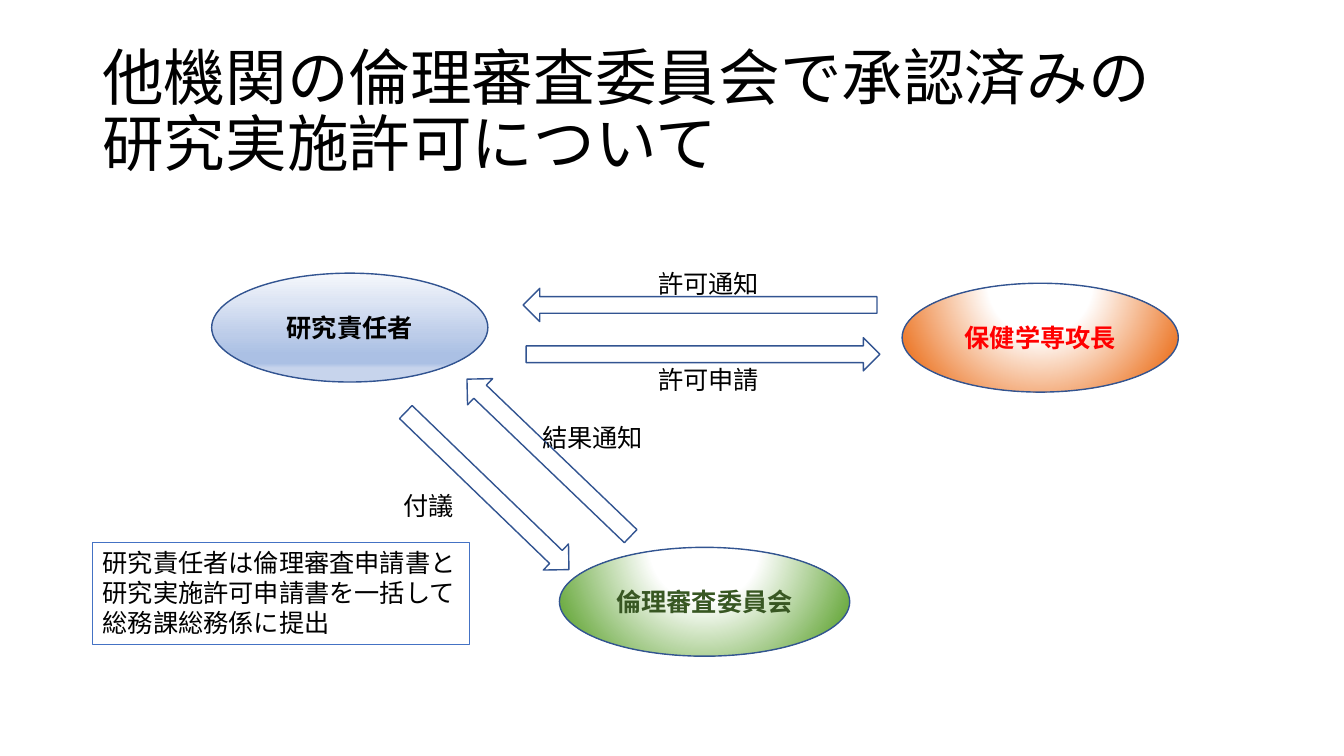
from dataclasses import dataclass
from typing import Optional

from lxml.etree import SubElement
from pptx import Presentation
from pptx.dml.color import RGBColor
from pptx.enum.shapes import MSO_SHAPE
from pptx.enum.text import MSO_ANCHOR, MSO_AUTO_SIZE, PP_ALIGN
from pptx.oxml.ns import qn
from pptx.util import Inches, Pt

COLUMNS, ROWS = 160, 90


@dataclass(frozen=True)
class Theme:
    font: str = "Noto Sans CJK JP"
    title_size: float = 44
    body_size: float = 18
    ink: str = "000000"
    outline: str = "325491"
    note_line: str = "4472C4"
    chief_text: str = "FF0000"
    board_text: str = "385723"
    blue_stops: tuple = ((0, "F6F8FC"), (25, "DDE5F4"), (57, "BCCCE9"), (74, "ABC0E4"),
                         (83, "ABC0E4"), (87, "C7D4EC"), (100, "C7D5ED"))
    orange_stops: tuple = ((0, "FFFFFF"), (35, "FFFFFF"), (100, "ED7D31"))
    green_stops: tuple = ((0, "FFFFFF"), (35, "FFFFFF"), (100, "70AD47"))


@dataclass(frozen=True)
class Area:
    column: float
    row: float
    columns: float
    rows: float


@dataclass(frozen=True)
class Party:
    name: str
    area: Area
    color: str
    stops: tuple
    radial: bool


@dataclass(frozen=True)
class Flow:
    area: Area
    rotation: float
    label: str
    label_area: Area


THEME = Theme()
TITLE_LINES = ("他機関の倫理審査委員会で承認済みの", "研究実施許可について")
TITLE_AREA = Area(11, 4.8, 138, 17.4)
NOTE_LINES = ("研究責任者は倫理審査申請書と", "研究実施許可申請書を一括して", "総務課総務係に提出")
NOTE_AREA = Area(11.04, 64.56, 44.88, 12.12)
PARTIES = (
    Party("研究責任者", Area(25.2, 32.52, 32.88, 12.96), THEME.ink, THEME.blue_stops, False),
    Party("保健学専攻長", Area(107.4, 33.72, 32.88, 12.96), THEME.chief_text,
          THEME.orange_stops, True),
    Party("倫理審査委員会", Area(66.6, 65.16, 34.56, 12.96), THEME.board_text,
          THEME.green_stops, True),
)
FLOWS = (
    Flow(Area(44.52, 56.28, 27, 4.32), 44, "付議", Area(46.8, 57.84, 8.52, 4.8)),
    Flow(Area(51.84, 52.32, 27, 4.32), 223.8, "結果通知", Area(63.36, 49.68, 14.52, 4.8)),
    Flow(Area(62.64, 40.2, 42.12, 3.96), 0, "許可申請", Area(77.16, 42.84, 14.52, 4.8)),
    Flow(Area(62.28, 34.32, 42.12, 3.96), 180, "許可通知", Area(77.16, 31.32, 14.52, 4.8)),
)

deck = Presentation()
deck.slide_width, deck.slide_height = Inches(13.33), Inches(7.5)
page = deck.slides.add_slide(deck.slide_layouts[6])


def place(area: Area) -> tuple:
    across, down = deck.slide_width / COLUMNS, deck.slide_height / ROWS
    return (round(area.column * across), round(area.row * down),
            round(area.columns * across), round(area.rows * down))


def add_span(para, text: str, size: float, color: str, bold: bool = False) -> None:
    span = para.add_run()
    span.text = text
    span.font.size = Pt(size)
    span.font.bold = bold
    span.font.color.rgb = RGBColor.from_string(color)
    span.font.name = THEME.font
    SubElement(span.font._element, qn("a:ea"), typeface=THEME.font)


def set_line(box, color: str, width: float) -> None:
    box.line.color.rgb = RGBColor.from_string(color)
    box.line.width = Pt(width)


def set_gradient(box, stops: tuple, radial: bool) -> None:
    box.fill.background()
    properties = box._element.spPr
    gradient = SubElement(properties, qn("a:gradFill"), rotWithShape="1")
    properties.replace(properties.find(qn("a:noFill")), gradient)
    stop_list = SubElement(gradient, qn("a:gsLst"))
    for position, color in stops:
        stop = SubElement(stop_list, qn("a:gs"), pos=str(position * 1000))
        SubElement(stop, qn("a:srgbClr"), val=color)
    if radial:
        circle = SubElement(gradient, qn("a:path"), {"path": "circle"})
        SubElement(circle, qn("a:fillToRect"), l="50000", t="-80000", r="50000", b="180000")
    else:
        SubElement(gradient, qn("a:lin"), ang="5400000", scaled="0")


def add_shape(kind: MSO_SHAPE, area: Area):
    box = page.shapes.add_shape(kind, *place(area))
    box.shadow.inherit = False
    set_line(box, THEME.outline, 1)
    return box


def add_title() -> None:
    frame = page.shapes.add_textbox(*place(TITLE_AREA)).text_frame
    frame.word_wrap = True
    frame.vertical_anchor = MSO_ANCHOR.MIDDLE
    para = frame.paragraphs[0]
    para.line_spacing = 0.9
    for index, line in enumerate(TITLE_LINES):
        if index:
            para.add_line_break()
        add_span(para, line, THEME.title_size, THEME.ink)


def add_arrow(flow: Flow) -> None:
    arrow = add_shape(MSO_SHAPE.RIGHT_ARROW, flow.area)
    arrow.fill.background()
    arrow.rotation = flow.rotation


def add_party(party: Party) -> None:
    ellipse = add_shape(MSO_SHAPE.OVAL, party.area)
    set_gradient(ellipse, party.stops, party.radial)
    frame = ellipse.text_frame
    frame.vertical_anchor = MSO_ANCHOR.MIDDLE
    para = frame.paragraphs[0]
    para.alignment = PP_ALIGN.CENTER
    add_span(para, party.name, THEME.body_size, party.color, bold=True)


def add_text(lines: tuple, area: Area, line_color: Optional[str] = None) -> None:
    box = page.shapes.add_textbox(*place(area))
    if line_color:
        set_line(box, line_color, 0.75)
    frame = box.text_frame
    frame.word_wrap = False
    frame.auto_size = MSO_AUTO_SIZE.SHAPE_TO_FIT_TEXT
    for index, line in enumerate(lines):
        para = frame.add_paragraph() if index else frame.paragraphs[0]
        add_span(para, line, THEME.body_size, THEME.ink)


def main() -> None:
    add_title()
    for flow in FLOWS:
        add_arrow(flow)
    for party in PARTIES:
        add_party(party)
    for flow in FLOWS:
        add_text((flow.label,), flow.label_area)
    add_text(NOTE_LINES, NOTE_AREA, THEME.note_line)
    deck.save("out.pptx")


if __name__ == "__main__":
    main()
